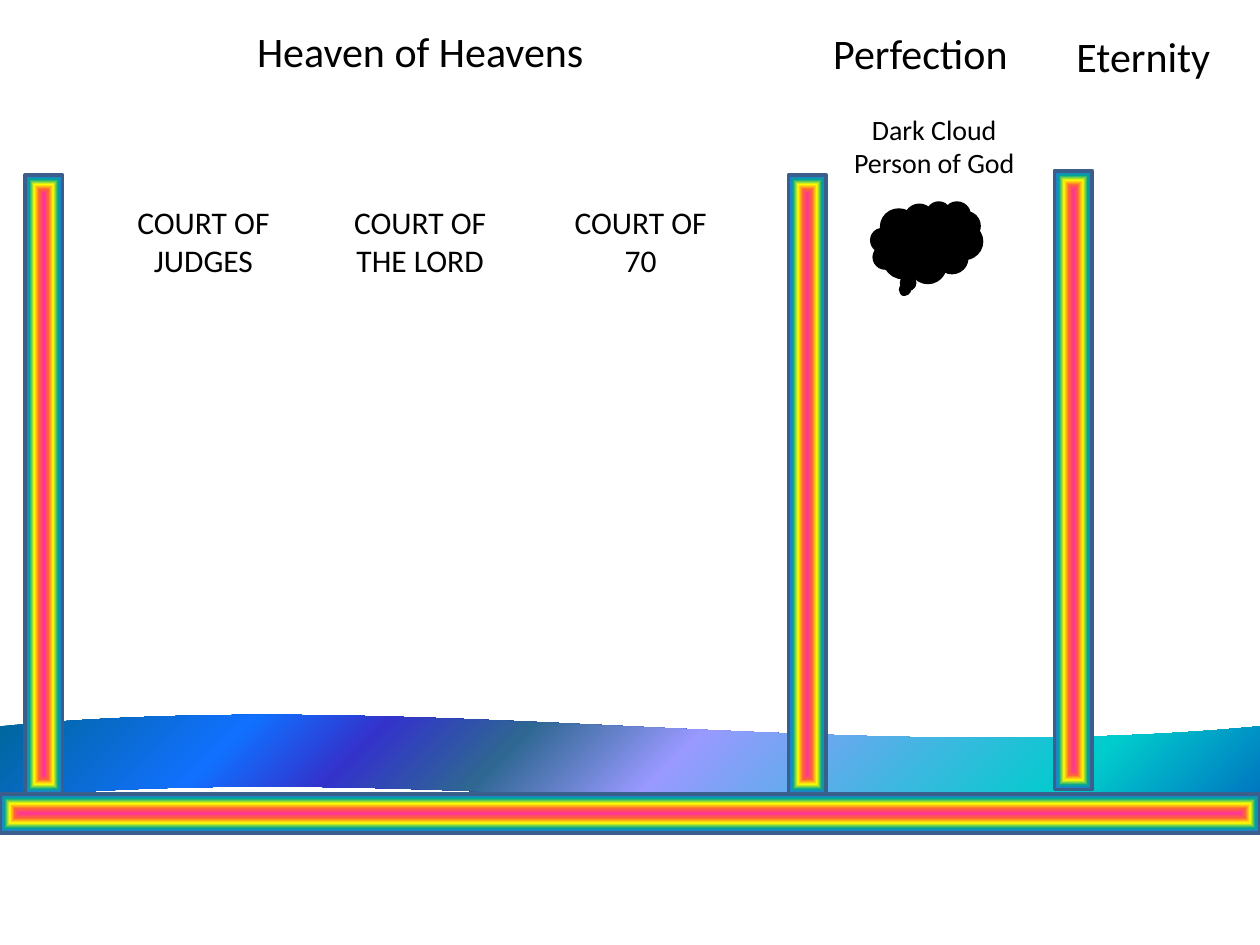
"""Build a slide of the heavenly courts between rainbow pillars above a sea."""
from pptx import Presentation
from pptx.dml.color import RGBColor
from pptx.enum.shapes import MSO_SHAPE
from pptx.enum.text import MSO_ANCHOR, MSO_AUTO_SIZE, PP_ALIGN
from pptx.oxml import parse_xml
from pptx.oxml.ns import nsdecls, qn
from pptx.util import Pt

WAVE, BAR, CLOUD = MSO_SHAPE.WAVE, MSO_SHAPE.RECTANGLE, MSO_SHAPE.CLOUD_CALLOUT
TOP, MIDDLE = MSO_ANCHOR.TOP, MSO_ANCHOR.MIDDLE
CENTER = PP_ALIGN.CENTER
FIT_SHAPE = MSO_AUTO_SIZE.SHAPE_TO_FIT_TEXT

BLACK = RGBColor(0x00, 0x00, 0x00)
EDGE = RGBColor(0x3A, 0x5F, 0x8C)
FONT = "Calibri"

SEA = {
    "path": "circle",
    "focus": (100, 100, 0, 0),
    "stops": [(0, "0070C0"), (16, "00CCCC"), (47, "9999FF"), (60, "2E6792"),
              (71, "3333CC"), (81, "1170FF"), (100, "006699")],
}
RAINBOW = {
    "path": "shape",
    "focus": (50, 50, 50, 50),
    "stops": [(0, "FF3399"), (25, "FF6633"), (50, "FFFF00"),
              (75, "01A78F"), (100, "3366FF")],
}

SEA_BOX = (0, 408.24, 720, 54.72)
FLOOR_BOX = (0, 453.6, 720, 22.32)
CLOUD_BOX = (498.24, 115.92, 62.64, 45.36)
PILLARS = [(14.2, 100), (450.6, 100), (602.6, 97.6)]
PILLAR_SIZE = (21.6, 353.6)

HEADINGS = [
    ("Heaven of Heavens", (132.5, 10.8, 215.3, 36), 24),
    ("Perfection", (461.5, 12.2, 128.9, 36), 24),
    ("Eternity", (596.9, 13.7, 113, 36), 24),
    ("Dark Cloud\vPerson of God", (477.4, 60.5, 113, 46), 16),
]
COURTS = [("JUDGES", 54), ("THE LORD", 177.8), ("70", 303.8)]
COURT_TOP, COURT_SIZE = 115.9, (124.6, 43.9)


def add_figure(page, kind, box):
    shape = page.shapes.add_shape(kind, *map(Pt, box))
    shape.shadow.inherit = False
    return shape


def paint_gradient(shape, gradient):
    stops = "".join(
        f'<a:gs pos="{place * 1000}"><a:srgbClr val="{color}"/></a:gs>'
        for place, color in gradient["stops"])
    focus = " ".join(f'{side}="{part * 1000}"'
                     for side, part in zip("ltrb", gradient["focus"]))
    shape.fill.gradient()
    old = shape._element.spPr.find(qn("a:gradFill"))
    old.getparent().replace(old, parse_xml(
        f'<a:gradFill {nsdecls("a")} rotWithShape="1"><a:gsLst>{stops}</a:gsLst>'
        f'<a:path path="{gradient["path"]}"><a:fillToRect {focus}/></a:path>'
        '</a:gradFill>'))


def outline(shape, color):
    shape.line.color.rgb = color
    shape.line.width = Pt(2)


def add_bar(page, box):
    bar = add_figure(page, BAR, box)
    paint_gradient(bar, RAINBOW)
    outline(bar, EDGE)


def add_label(page, text, box, size, anchor=TOP, inset=(7.2, 3.6)):
    frame = page.shapes.add_textbox(*map(Pt, box)).text_frame
    frame.word_wrap = True
    frame.auto_size = FIT_SHAPE
    frame.vertical_anchor = anchor
    frame.margin_left = frame.margin_right = Pt(inset[0])
    frame.margin_top = frame.margin_bottom = Pt(inset[1])
    para = frame.paragraphs[0]
    para.text = text
    para.alignment = CENTER
    for span in para.runs:
        span.font.name = FONT
        span.font.size = Pt(size)
        span.font.color.rgb = BLACK


def main():
    deck = Presentation()
    deck.slide_width, deck.slide_height = Pt(720), Pt(540)
    page = deck.slides.add_slide(deck.slide_layouts[6])

    sea = add_figure(page, WAVE, SEA_BOX)
    paint_gradient(sea, SEA)
    sea.line.fill.background()

    add_bar(page, FLOOR_BOX)
    for left, top in PILLARS:
        add_bar(page, (left, top, *PILLAR_SIZE))

    for text, box, size in HEADINGS:
        add_label(page, text, box, size)
    for name, left in COURTS:
        add_label(page, f"COURT OF\v{name}", (left, COURT_TOP, *COURT_SIZE),
                  18, MIDDLE, (0, 0))

    cloud = add_figure(page, CLOUD, CLOUD_BOX)
    cloud.fill.solid()
    cloud.fill.fore_color.rgb = BLACK
    outline(cloud, BLACK)

    deck.save("out.pptx")


if __name__ == "__main__":
    main()
